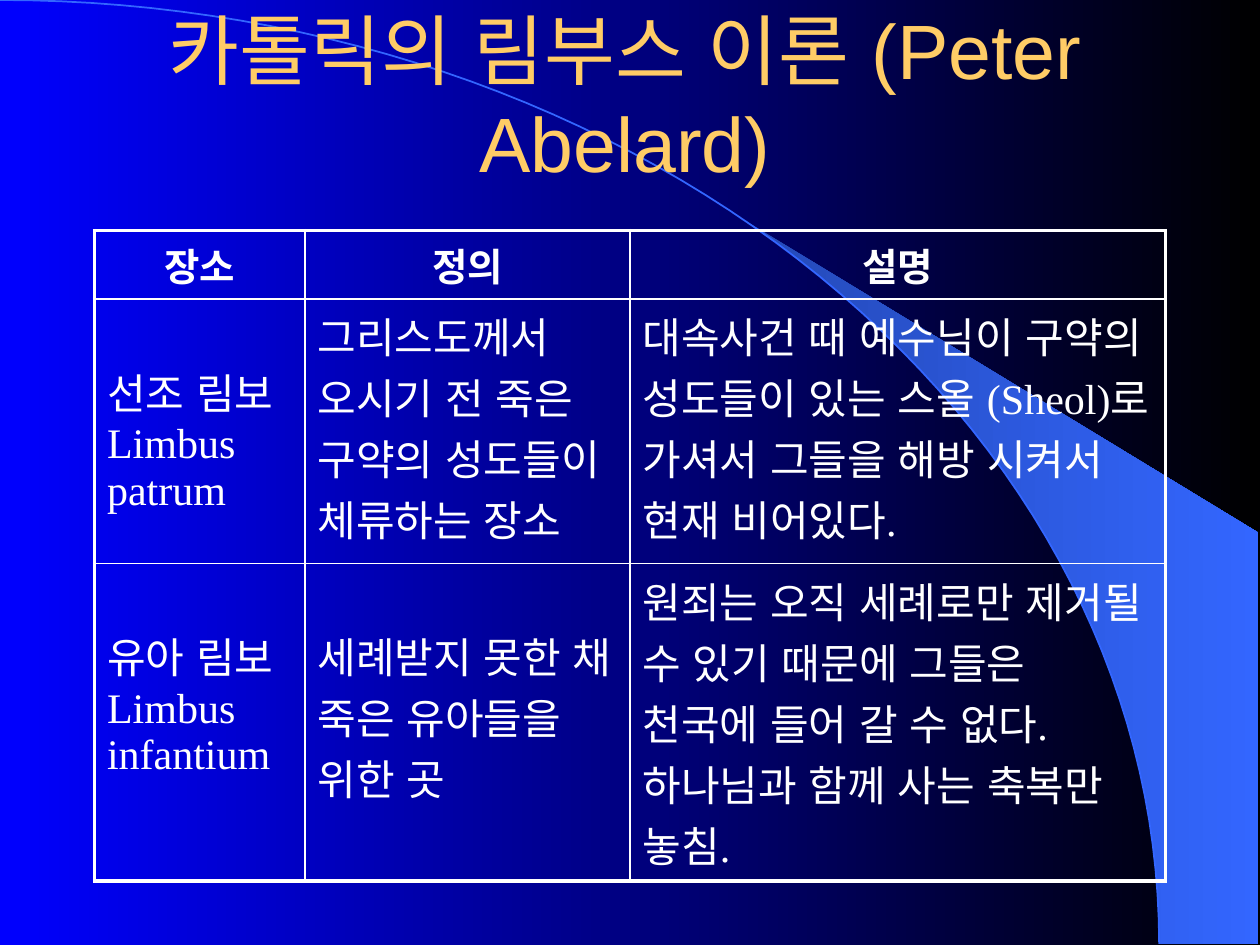
"""Build a slide on the Catholic theory of limbo with a table of its two kinds."""
from math import asin, cos, pi, sin

from lxml.etree import SubElement
from pptx import Presentation
from pptx.dml.color import RGBColor
from pptx.enum.lang import MSO_LANGUAGE_ID
from pptx.enum.text import MSO_ANCHOR, MSO_AUTO_SIZE, PP_ALIGN
from pptx.oxml.ns import qn
from pptx.util import Inches, Pt

BLUE = RGBColor(0x00, 0x00, 0xFF)
BLACK = RGBColor(0x00, 0x00, 0x00)
DEEP_BLUE = RGBColor(0x24, 0x49, 0xB6)
BRIGHT_BLUE = RGBColor(0x33, 0x66, 0xFF)
GOLD = RGBColor(0xFF, 0xCC, 0x66)
WHITE = RGBColor(0xFF, 0xFF, 0xFF)

TITLE = "카톨릭의 림부스 이론 (Peter Abelard)"
ROWS = [
    ["장소", "정의", "설명"],
    [
        "선조 림보 Limbus patrum",
        "그리스도께서 오시기 전 죽은 구약의 성도들이 체류하는 장소",
        "대속사건 때 예수님이 구약의 성도들이 있는 스올 (Sheol)로 가셔서 "
        "그들을 해방 시켜서 현재 비어있다.",
    ],
    [
        "유아 림보 Limbus infantium",
        "세례받지 못한 채 죽은 유아들을 위한 곳",
        "원죄는 오직 세례로만 제거될 수 있기 때문에 그들은 천국에 들어 갈 수 없다. "
        "하나님과 함께 사는 축복만 놓침.",
    ],
]
LOWERED_CELLS = {(1, 0), (2, 0), (2, 1)}
COLUMN_WIDTHS = [1.67, 2.58, 4.25]
ROW_HEIGHTS = [0.54, 2.1, 2.52]
TABLE_LEFT, TABLE_TOP = 0.75, 1.83
TITLE_PLACE = {"left": 0.67, "top": 0.17, "width": 8.58, "height": 1.17}
ARC_WIDTH, ARC_HEIGHT = 9.2, 7.49
WEDGE_START = asin(5.89 / ARC_WIDTH)
WEDGE_CORNERS = [(9.99, 7.49), (9.99, 4.23)]
TITLE_FONT = {"name": "Arial", "size": Pt(44), "bold": False}
HEAD_FONT = {"name": "Times New Roman", "size": Pt(22), "bold": True}
BODY_FONT = {"name": "Times New Roman", "size": Pt(24), "bold": False}


def arc_points(start, steps=60):
    angles = [start + (pi / 2 - start) * step / steps for step in range(steps + 1)]
    return [(ARC_WIDTH * sin(a), ARC_HEIGHT * (1 - cos(a))) for a in angles]


def add_outline(page, points, closed):
    corners = [(Inches(x), Inches(y)) for x, y in points]
    builder = page.shapes.build_freeform(*corners[0])
    builder.add_line_segments(corners[1:], close=closed)
    shape = builder.convert_to_shape()
    shape.shadow.inherit = False
    return shape


def fill_gradient(fill, colours):
    fill.gradient()
    fill.gradient_angle = 0
    for position, (stop, colour) in enumerate(zip(fill.gradient_stops, colours)):
        stop.position = position
        stop.color.rgb = colour


def write(frame, text, font_format, colour, alignment):
    para = frame.paragraphs[0]
    para.alignment = alignment
    span = para.add_run()
    span.text = text
    for name, value in font_format.items():
        setattr(span.font, name, value)
    span.font.language_id = MSO_LANGUAGE_ID.KOREAN
    span.font.color.rgb = colour


def add_borders(cell, outer_sides):
    properties = cell._tc.get_or_add_tcPr()
    for index, side in enumerate("LRTB"):
        width = Pt(2.25) if side in outer_sides else Pt(1)
        line = SubElement(properties, qn(f"a:ln{side}"), w=str(width))
        colour = SubElement(SubElement(line, qn("a:solidFill")), qn("a:srgbClr"))
        colour.set("val", str(WHITE))
        properties.insert(index, line)


def add_limbo_table(page):
    table = page.shapes.add_table(
        len(ROWS), len(COLUMN_WIDTHS), Inches(TABLE_LEFT), Inches(TABLE_TOP),
        Inches(sum(COLUMN_WIDTHS)), Inches(sum(ROW_HEIGHTS)),
    ).table
    table.first_row = table.horz_banding = False
    for column, width in zip(table.columns, COLUMN_WIDTHS):
        column.width = Inches(width)
    for row, height in zip(table.rows, ROW_HEIGHTS):
        row.height = Inches(height)
    last_row, last_column = len(ROWS) - 1, len(COLUMN_WIDTHS) - 1
    for r, texts in enumerate(ROWS):
        for c, text in enumerate(texts):
            cell = table.cell(r, c)
            cell.fill.background()
            cell.margin_top = Inches(0.49 if (r, c) in LOWERED_CELLS else 0.05)
            edges = {"L": c == 0, "R": c == last_column, "T": r == 0, "B": r == last_row}
            add_borders(cell, [side for side, outer in edges.items() if outer])
            font_format = BODY_FONT if r else HEAD_FONT
            alignment = PP_ALIGN.LEFT if r else PP_ALIGN.CENTER
            write(cell.text_frame, text, font_format, WHITE, alignment)


def main():
    deck = Presentation()
    deck.slide_width, deck.slide_height = Inches(10), Inches(7.5)
    page = deck.slides.add_slide(deck.slide_layouts[5])
    fill_gradient(page.background.fill, [BLUE, BLACK])

    wedge = add_outline(page, arc_points(WEDGE_START) + WEDGE_CORNERS, True)
    fill_gradient(wedge.fill, [DEEP_BLUE, BRIGHT_BLUE])
    wedge.line.fill.background()
    arc = add_outline(page, arc_points(0), False)
    arc.fill.background()
    arc.line.color.rgb = BRIGHT_BLUE
    arc.line.width = Pt(1)

    title = page.shapes.title
    page.shapes._spTree.append(title._element)
    for name, value in TITLE_PLACE.items():
        setattr(title, name, Inches(value))
    title.text_frame.auto_size = MSO_AUTO_SIZE.NONE
    title.text_frame.vertical_anchor = MSO_ANCHOR.MIDDLE
    write(title.text_frame, TITLE, TITLE_FONT, GOLD, PP_ALIGN.CENTER)

    add_limbo_table(page)
    deck.save("out.pptx")


if __name__ == "__main__":
    main()
